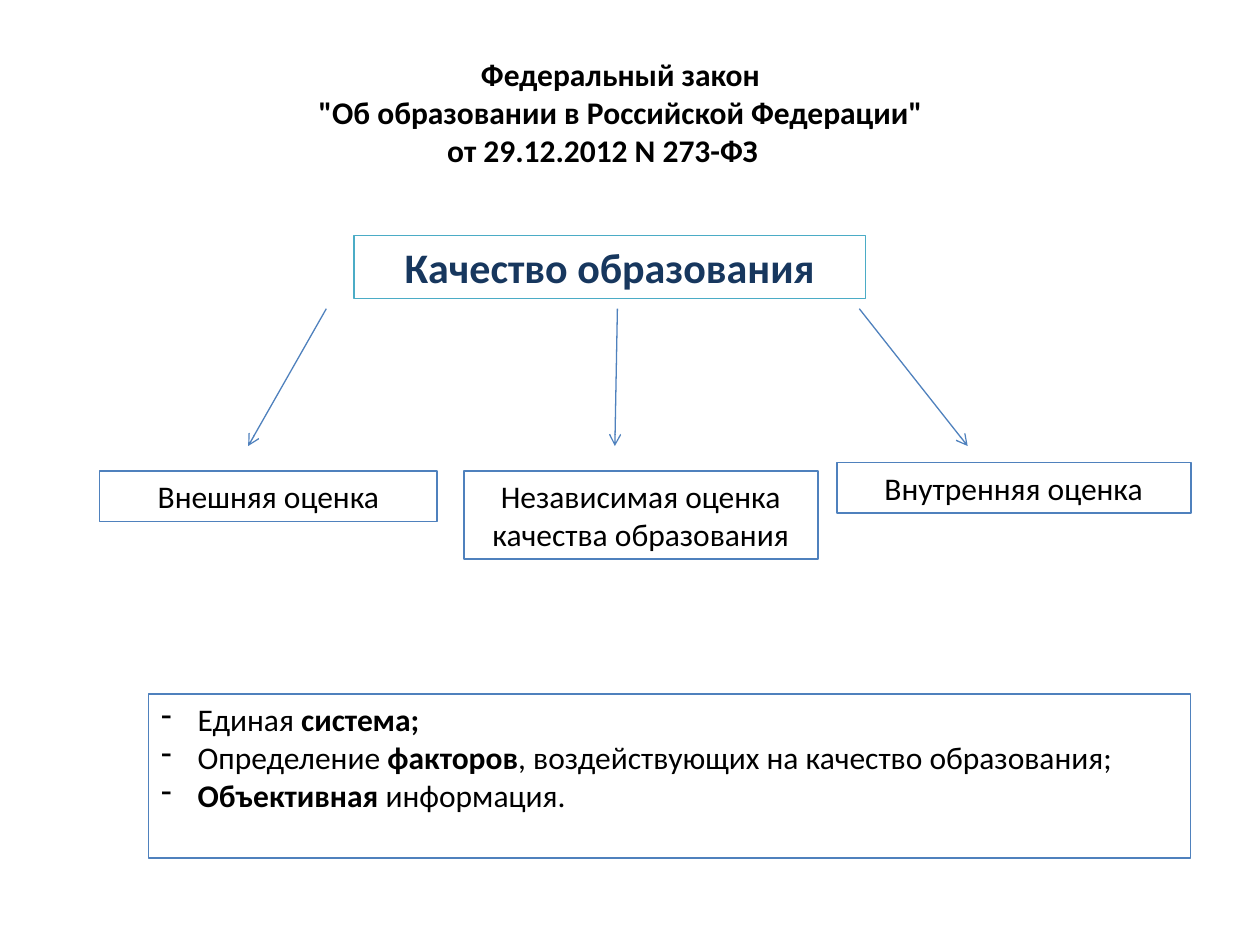
from dataclasses import dataclass

from lxml.etree import SubElement
from pptx import Presentation
from pptx.dml.color import RGBColor
from pptx.enum.shapes import MSO_CONNECTOR, MSO_SHAPE
from pptx.enum.text import MSO_ANCHOR, PP_ALIGN
from pptx.oxml.ns import qn
from pptx.util import Inches, Pt


@dataclass(frozen=True)
class Theme:
    font: str = "Calibri"
    body: int = 18
    heading: int = 24
    text: str = "000000"
    navy: str = "17375E"
    teal: str = "4BACC6"
    blue: str = "4F81BD"
    white: str = "FFFFFF"


THEME = Theme()


def add_run(p, text, size=THEME.body, color=THEME.text, bold=False):
    r = p.add_run()
    r.text = text
    for name, value in {"name": THEME.font, "size": Pt(size), "bold": bold}.items():
        setattr(r.font, name, value)
    r.font.color.rgb = RGBColor.from_string(color)


def indent(p, left, first=0):
    pPr = p._p.get_or_add_pPr()
    pPr.set("marL", str(Inches(left)))
    pPr.set("indent", str(Inches(first)))
    return pPr


def paragraphs(tf, count):
    return [tf.paragraphs[0]] + [tf.add_paragraph() for _ in range(count - 1)]


def add_box(s, box, line=THEME.blue):
    sp = s.shapes.add_shape(MSO_SHAPE.RECTANGLE, *map(Inches, box))
    sp.shadow.inherit = False
    sp.fill.solid()
    sp.fill.fore_color.rgb = RGBColor.from_string(THEME.white)
    sp.line.color.rgb = RGBColor.from_string(line)
    sp.line.width = Pt(1)
    tf = sp.text_frame
    for name, value in {"word_wrap": True, "vertical_anchor": MSO_ANCHOR.TOP}.items():
        setattr(tf, name, value)
    return tf


def add_label(s, box, text, line=THEME.blue, **style):
    p = add_box(s, box, line).paragraphs[0]
    p.alignment = PP_ALIGN.CENTER
    add_run(p, text, **style)


def add_title(s, box, lines, last_indent):
    tf = s.shapes.add_textbox(*map(Inches, box)).text_frame
    tf.word_wrap = True
    ps = paragraphs(tf, len(lines))
    for p, text in zip(ps, lines):
        p.alignment = PP_ALIGN.CENTER
        add_run(p, text, bold=True)
    ps[-1].alignment = PP_ALIGN.LEFT
    indent(ps[-1], last_indent)


def add_arrow(s, start, end):
    sp = s.shapes.add_connector(MSO_CONNECTOR.STRAIGHT, *map(Inches, start + end))
    sp.line.color.rgb = RGBColor.from_string(THEME.blue)
    sp.line.width = Pt(0.75)
    SubElement(sp.line._get_or_add_ln(), qn("a:tailEnd"), type="arrow")
    SubElement(sp._element.spPr, qn("a:effectLst"))


def add_branches(s, box, branches):
    left, top, width, height = box
    for text, (x, y, w, h), start_x, end_x in branches:
        add_arrow(s, (left + start_x, top), (left + end_x, top + height))
        add_label(s, (left + x, top + y, w, h), text)


def add_goals(s, box, goals):
    tf = add_box(s, box)
    for p, parts in zip(paragraphs(tf, len(goals)), goals):
        p.alignment = PP_ALIGN.LEFT
        pPr = indent(p, 0.29, -0.29)
        SubElement(SubElement(pPr, qn("a:buClr")), qn("a:srgbClr"), val=THEME.text)
        SubElement(pPr, qn("a:buFontTx"))
        SubElement(pPr, qn("a:buChar"), char="-")
        for text, bold in parts:
            add_run(p, text, bold=bold)


def main():
    prs = Presentation()
    prs.slide_width, prs.slide_height = Inches(10), Inches(7.5)
    s = prs.slides.add_slide(prs.slide_layouts[6])
    add_title(s, (0.47, 0.39, 8.91, 1), [
        "Федеральный закон",
        "\"Об образовании в Российской Федерации\"",
        "от 29.12.2012 N 273-ФЗ",
    ], last_indent=2.98)
    add_label(s, (2.81, 1.87, 4.06, 0.5), "Качество образования",
              THEME.teal, size=THEME.heading, color=THEME.navy, bold=True)
    add_branches(s, (0.79, 2.45, 8.66, 1.09), [
        ("Внешняя оценка", (0, 1.29, 2.68, 0.4), 1.8, 1.18),
        ("Независимая оценка качества образования", (2.89, 1.29, 2.81, 0.7), 4.11, 4.09),
        ("Внутренняя оценка", (5.85, 1.22, 2.81, 0.4), 6.03, 6.89),
    ])
    add_goals(s, (1.18, 5.51, 8.27, 1.3), [
        [("Единая ", False), ("система;", True)],
        [("Определение ", False), ("факторов", True),
         (", воздействующих на качество образования;", False)],
        [("Объективная", True), (" информация.", False)],
    ])
    prs.save("out.pptx")


if __name__ == "__main__":
    main()
